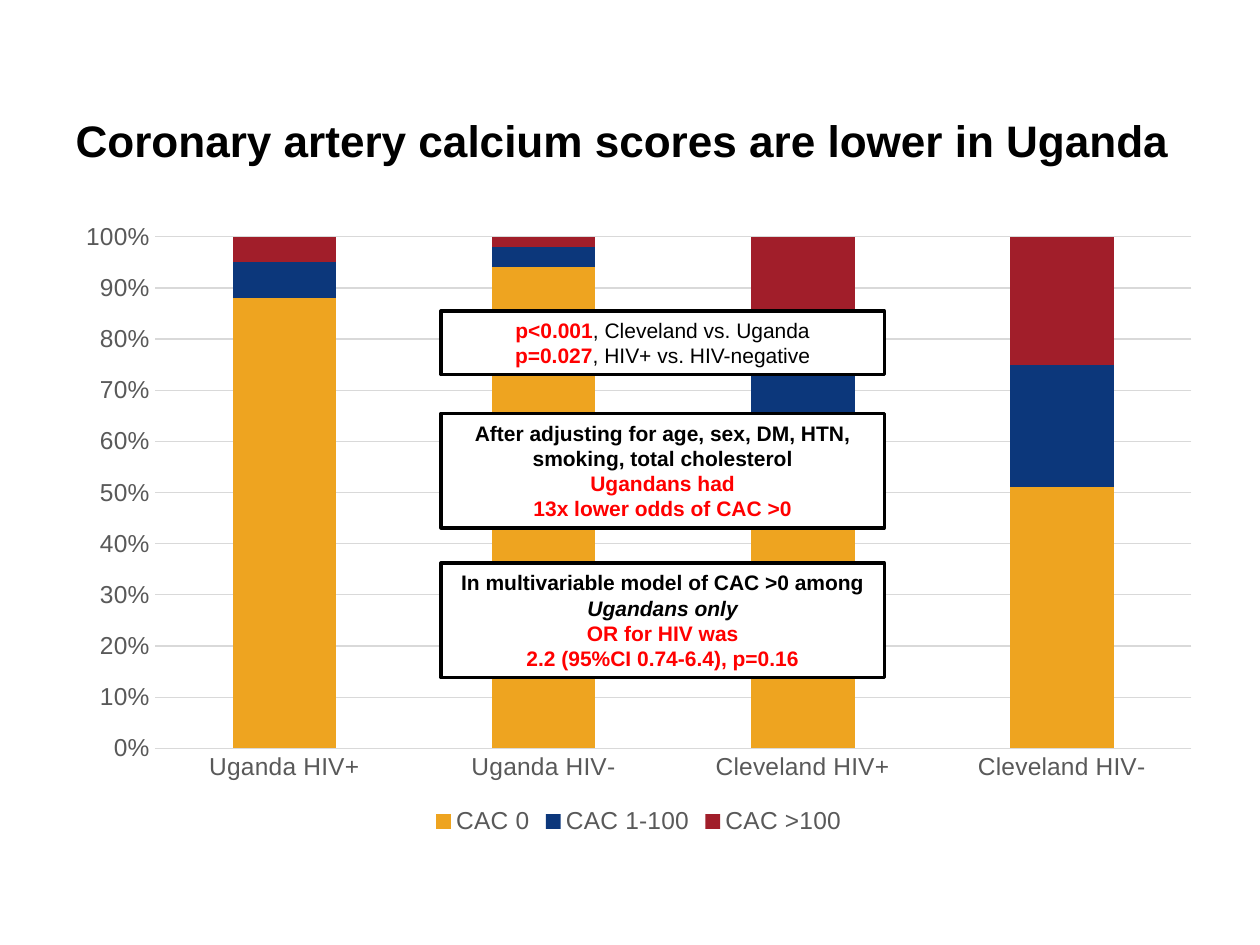
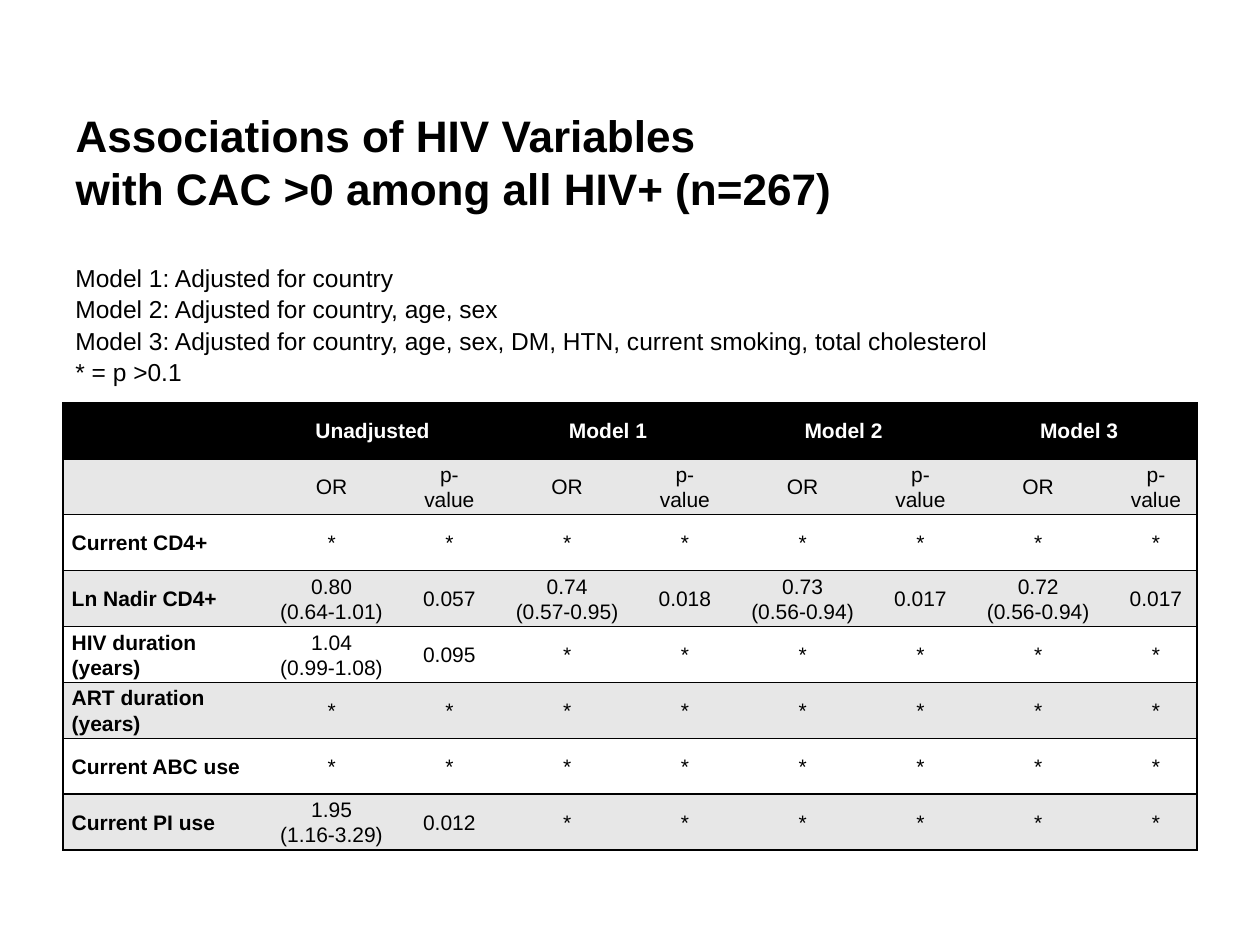
from lxml import etree
from pptx import Presentation
from pptx.chart.data import CategoryChartData
from pptx.dml.color import RGBColor
from pptx.enum.chart import XL_CHART_TYPE, XL_LEGEND_POSITION, XL_TICK_MARK
from pptx.enum.shapes import MSO_SHAPE
from pptx.enum.text import MSO_ANCHOR, MSO_AUTO_SIZE, PP_ALIGN
from pptx.oxml.ns import qn
from pptx.util import Pt

LEFT, CENTER = PP_ALIGN.LEFT, PP_ALIGN.CENTER
TOP, MIDDLE = MSO_ANCHOR.TOP, MSO_ANCHOR.MIDDLE
NO_AUTOFIT = MSO_AUTO_SIZE.NONE
NO_TICKS = XL_TICK_MARK.NONE
STACKED_100 = XL_CHART_TYPE.COLUMN_STACKED_100
LEGEND_BOTTOM = XL_LEGEND_POSITION.BOTTOM
RECTANGLE = MSO_SHAPE.RECTANGLE

FONT = "Arial"
BLACK, WHITE, RED = "000000", "FFFFFF", "FF0000"
BAND_GRAY, AXIS_TEXT, GRID_GRAY = "E7E7E7", "595959", "D9D9D9"
MARGIN, CONTENT_WIDTH = 36, 648


def color(hex_value):
    return RGBColor.from_string(hex_value)


def format_font(font, size, hex_value=BLACK, **values):
    font.color.rgb = color(hex_value)
    for name, value in {"name": FONT, "size": Pt(size), **values}.items():
        setattr(font, name, value)


presentation = Presentation()
presentation.slide_width, presentation.slide_height = Pt(720), Pt(540)
title_only = presentation.slide_layouts[5]

# Titles
slides = []
for title_text, top in [
    ("Coronary artery calcium scores are lower in Uganda", 61.2),
    ("Associations of HIV Variables\vwith CAC >0 among all HIV+ (n=267)", 58.3),
]:
    slide = presentation.slides.add_slide(title_only)
    title = slide.shapes.title
    title.left, title.top = Pt(MARGIN), Pt(top)
    title.width, title.height = Pt(CONTENT_WIDTH), Pt(50.4)
    frame = title.text_frame
    frame.text = title_text
    frame.auto_size, frame.vertical_anchor = NO_AUTOFIT, TOP
    paragraph = frame.paragraphs[0]
    paragraph.alignment = LEFT
    for run in paragraph.runs:
        format_font(run.font, 25.2, bold=True)
    slides.append(slide)
calcium_slide, association_slide = slides

# Calcium score chart
score_groups = [
    ("CAC 0", (88, 94, 53, 51), "EEA420"),
    ("CAC 1-100", (7, 4, 29, 24), "0C377B"),
    ("CAC >100", (5, 2, 18, 25), "A11E2A"),
]
chart_data = CategoryChartData()
chart_data.categories = ["Uganda HIV+", "Uganda HIV-", "Cleveland HIV+", "Cleveland HIV-"]
for name, values, _ in score_groups:
    chart_data.add_series(name, values)
chart = calcium_slide.shapes.add_chart(
    STACKED_100, Pt(MARGIN), Pt(120.2), Pt(658), Pt(360), chart_data
).chart
format_font(chart.font, 10)
chart.has_title = False
chart.has_legend = True
chart.legend.position = LEGEND_BOTTOM
chart.legend.include_in_layout = False
format_font(chart.legend.font, 14, AXIS_TEXT)

plot = chart.plots[0]
plot.gap_width, plot.overlap, plot.vary_by_categories = 150, 100, False
for series, (_, _, fill) in zip(plot.series, score_groups):
    series.format.fill.solid()
    series.format.fill.fore_color.rgb = color(fill)

category_axis, value_axis = chart.category_axis, chart.value_axis
for axis in (category_axis, value_axis):
    axis.major_tick_mark = axis.minor_tick_mark = NO_TICKS
    format_font(axis.tick_labels.font, 14, AXIS_TEXT)
value_axis.format.line.fill.background()
value_axis.tick_labels.number_format = "0%"
value_axis.tick_labels.number_format_is_linked = False
for line in (category_axis.format.line, value_axis.major_gridlines.format.line):
    line.color.rgb = color(GRID_GRAY)
    line.width = Pt(0.75)

# Result callouts: each paragraph is a list of (text, colour, bold, italic)
callouts = [
    (177.8, 36.3, [
        [("p<0.001", RED, True, False), (", Cleveland vs. Uganda", BLACK, False, False)],
        [("p=0.027", RED, True, False), (", HIV+ vs. HIV-negative", BLACK, False, False)],
    ]),
    (236.2, 65.4, [
        [("After adjusting for age, sex, DM, HTN, smoking, total cholesterol", BLACK, True, False)],
        [("Ugandans had", RED, True, False)],
        [("13x lower odds of CAC >0", RED, True, False)],
    ]),
    (321.8, 65.4, [
        [("In multivariable model of CAC >0 among ", BLACK, True, False),
         ("Ugandans only", BLACK, True, True)],
        [("OR for HIV was", RED, True, False)],
        [("2.2 (95%CI 0.74-6.4), p=0.16", RED, True, False)],
    ]),
]
for top, height, lines in callouts:
    shape = calcium_slide.shapes.add_shape(RECTANGLE, Pt(252), Pt(top), Pt(253.4), Pt(height))
    shape.shadow.inherit = False
    shape.fill.solid()
    shape.fill.fore_color.rgb = color(WHITE)
    shape.line.color.rgb = color(BLACK)
    shape.line.width = Pt(2)
    frame = shape.text_frame
    frame.word_wrap, frame.vertical_anchor = True, MIDDLE
    for index, runs in enumerate(lines):
        paragraph = frame.add_paragraph() if index else frame.paragraphs[0]
        paragraph.alignment = CENTER
        for text, hex_value, bold, italic in runs:
            run = paragraph.add_run()
            run.text = text
            format_font(run.font, 12, hex_value, bold=bold, italic=italic)

# Association table
models = ["Unadjusted", "Model 1", "Model 2", "Model 3"]
header = [""]
for model in models:
    header += [model, ""]
rows = [
    header,
    [""] + ["OR", "p-value"] * len(models),
    ["Current CD4+"] + ["*"] * 8,
    ["Ln Nadir CD4+", "0.80\n(0.64-1.01)", "0.057", "0.74\n(0.57-0.95)", "0.018",
     "0.73\n(0.56-0.94)", "0.017", "0.72\n(0.56-0.94)", "0.017"],
    ["HIV duration (years)", "1.04\n(0.99-1.08)", "0.095"] + ["*"] * 6,
    ["ART duration (years)"] + ["*"] * 8,
    ["Current ABC use"] + ["*"] * 8,
    ["Current PI use", "1.95\n(1.16-3.29)", "0.012"] + ["*"] * 6,
]
column_widths = [109.6] + [87.8, 46.8] * len(models)
row_height = 31.95
last_column = len(column_widths) - 1
table = association_slide.shapes.add_table(
    len(rows), len(column_widths), Pt(MARGIN), Pt(230.2),
    Pt(CONTENT_WIDTH), Pt(row_height * len(rows)),
).table
for column, width in zip(table.columns, column_widths):
    column.width = Pt(width)
for row in table.rows:
    row.height = Pt(row_height)
for column_index in range(1, last_column, 2):
    table.cell(0, column_index).merge(table.cell(0, column_index + 1))

cell_format = {"margin_left": Pt(5), "margin_right": Pt(5), "margin_top": 0,
               "margin_bottom": 0, "vertical_anchor": MIDDLE}
for row_index, texts in enumerate(rows):
    is_header = row_index == 0
    fill = BLACK if is_header else BAND_GRAY if row_index % 2 else WHITE
    for column_index, text in enumerate(texts):
        cell = table.cell(row_index, column_index)
        for name, value in cell_format.items():
            setattr(cell, name, value)
        cell.text = text
        for paragraph in cell.text_frame.paragraphs:
            paragraph.alignment = CENTER if column_index else LEFT
            paragraph.line_spacing = 1.07
            format_font(paragraph.font, 12, WHITE if is_header else BLACK,
                        bold=is_header or column_index == 0)

        # Borders precede the fill in the cell properties
        properties = cell._tc.get_or_add_tcPr()
        visible = {"lnL": column_index == 0, "lnR": column_index == last_column,
                   "lnT": True, "lnB": True}
        if is_header and column_index == last_column - 1:
            visible["lnR"] = True
        for side, shown in visible.items():
            border = etree.SubElement(properties, qn(f"a:{side}"), w=str(Pt(1)))
            if shown:
                solid = etree.SubElement(border, qn("a:solidFill"))
                etree.SubElement(solid, qn("a:srgbClr"), val=BLACK)
            else:
                etree.SubElement(border, qn("a:noFill"))
        cell.fill.solid()
        cell.fill.fore_color.rgb = color(fill)

# Model definitions
definitions = [
    "Model 1: Adjusted for country",
    "Model 2: Adjusted for country, age, sex",
    "Model 3: Adjusted for country, age, sex, DM, HTN, current smoking, total cholesterol",
    "* = p >0.1",
]
frame = association_slide.shapes.add_textbox(
    Pt(MARGIN), Pt(145.4), Pt(CONTENT_WIDTH), Pt(79.9)
).text_frame
frame.word_wrap = True
frame.text = "\n".join(definitions)
for paragraph in frame.paragraphs:
    paragraph.line_spacing = 1.07
    format_font(paragraph.font, 14)

presentation.save("out.pptx")
